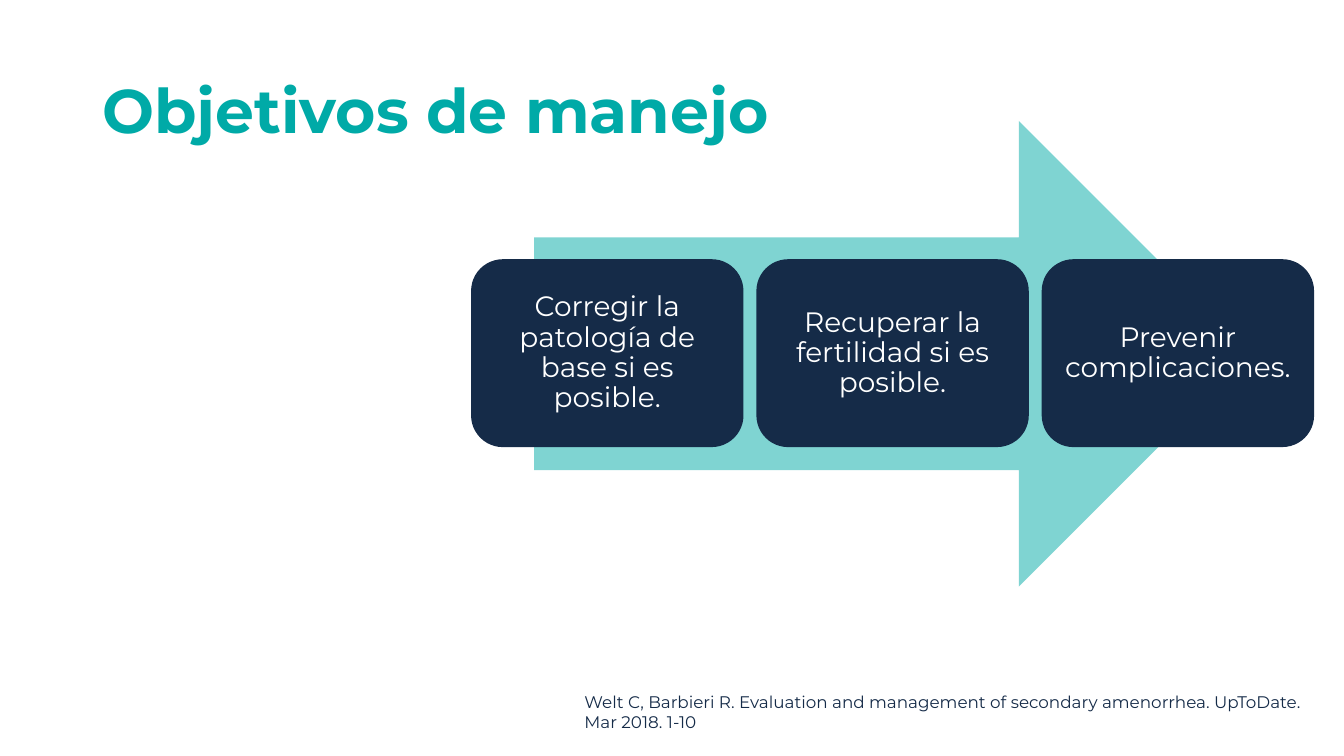
"""Build the slide on management goals: a wide arrow carrying three goal cards."""
from dataclasses import dataclass

from lxml.etree import SubElement
from pptx import Presentation
from pptx.dml.color import RGBColor
from pptx.enum.shapes import MSO_SHAPE
from pptx.enum.text import MSO_ANCHOR, PP_ALIGN
from pptx.oxml.ns import qn
from pptx.shapes.autoshape import Shape
from pptx.slide import Slide
from pptx.util import Cm, Pt


@dataclass(frozen=True)
class Theme:
    """Font, colours and type sizes of the slide."""
    font: str = "Montserrat"
    teal: RGBColor = RGBColor(0x00, 0xAA, 0xA7)
    navy: RGBColor = RGBColor(0x15, 0x2B, 0x48)
    white: RGBColor = RGBColor(0xFF, 0xFF, 0xFF)
    title_size: int = 44
    card_size: int = 20
    citation_size: int = 12


@dataclass(frozen=True)
class Area:
    """Position and size in centimetres."""
    left: float
    top: float
    width: float
    height: float

    def lengths(self) -> tuple[Cm, Cm, Cm, Cm]:
        """Return the four measures as lengths."""
        return Cm(self.left), Cm(self.top), Cm(self.width), Cm(self.height)


@dataclass(frozen=True)
class TextStyle:
    """Look of a block of text."""
    size: int
    color: RGBColor
    bold: bool = False
    align: PP_ALIGN = PP_ALIGN.LEFT
    anchor: MSO_ANCHOR = MSO_ANCHOR.TOP
    line_spacing: float = 1.0
    side_margin: float = 0.25
    end_margin: float = 0.13


THEME = Theme()
TITLE_STYLE = TextStyle(THEME.title_size, THEME.teal, bold=True,
                        anchor=MSO_ANCHOR.MIDDLE, line_spacing=0.9)
CARD_STYLE = TextStyle(THEME.card_size, THEME.white, align=PP_ALIGN.CENTER,
                       anchor=MSO_ANCHOR.MIDDLE, line_spacing=0.9,
                       side_margin=0.21, end_margin=0.21)
CITATION_STYLE = TextStyle(THEME.citation_size, THEME.navy)

TITLE_AREA = Area(2.33, 1.01, 29.21, 3.68)
ARROW_AREA = Area(13.46, 3.05, 18.08, 11.73)
FIRST_CARD = Area(11.89, 6.55, 6.83, 4.7)
CITATION_AREA = Area(14.48, 17.3, 18.97, 1.27)
CARD_PITCH = 7.19

GOALS = (
    "Corregir la patología de base si es posible.",
    "Recuperar la fertilidad si es posible.",
    "Prevenir complicaciones.",
)
CITATION = ("Welt C, Barbieri R. Evaluation and management of secondary "
            "amenorrhea. UpToDate. Mar 2018. 1-10")


def apply(target: object, values: dict[str, object]) -> None:
    """Set each named attribute of the target."""
    for name, value in values.items():
        setattr(target, name, value)


def write_text(box: Shape, text: str, style: TextStyle) -> None:
    """Write one styled paragraph into a box."""
    frame = box.text_frame
    apply(frame, {
        "word_wrap": True, "vertical_anchor": style.anchor,
        "margin_left": Cm(style.side_margin), "margin_right": Cm(style.side_margin),
        "margin_top": Cm(style.end_margin), "margin_bottom": Cm(style.end_margin),
    })
    para = frame.paragraphs[0]
    apply(para, {"alignment": style.align, "line_spacing": style.line_spacing})
    span = para.add_run()
    span.text = text
    apply(span.font, {"name": THEME.font, "size": Pt(style.size), "bold": style.bold})
    span.font.color.rgb = style.color


def add_text(page: Slide, area: Area, text: str, style: TextStyle) -> None:
    """Add a text box."""
    write_text(page.shapes.add_textbox(*area.lengths()), text, style)


def add_filled(page: Slide, kind: MSO_SHAPE, area: Area, color: RGBColor) -> Shape:
    """Add a flat shape with a solid fill."""
    shape = page.shapes.add_shape(kind, *area.lengths())
    shape.shadow.inherit = False
    shape.fill.solid()
    shape.fill.fore_color.rgb = color
    return shape


def add_arrow(page: Slide) -> None:
    """Add the half-transparent arrow behind the cards."""
    arrow = add_filled(page, MSO_SHAPE.RIGHT_ARROW, ARROW_AREA, THEME.teal)
    arrow.line.fill.background()
    color = arrow.fill._xPr.find(qn("a:solidFill"))[0]
    SubElement(color, qn("a:alpha"), val="50000")


def add_card(page: Slide, index: int, goal: str) -> None:
    """Add the goal card at its place in the row."""
    area = Area(FIRST_CARD.left + index * CARD_PITCH, FIRST_CARD.top,
                FIRST_CARD.width, FIRST_CARD.height)
    card = add_filled(page, MSO_SHAPE.ROUNDED_RECTANGLE, area, THEME.navy)
    card.line.color.rgb = THEME.navy
    card.line.width = Pt(1)
    write_text(card, goal, CARD_STYLE)


def main() -> None:
    """Build and save the deck."""
    deck = Presentation()
    apply(deck, {"slide_width": Cm(33.87), "slide_height": Cm(19.05)})
    page = deck.slides.add_slide(deck.slide_layouts[6])
    add_text(page, TITLE_AREA, "Objetivos de manejo", TITLE_STYLE)
    add_arrow(page)
    for index, goal in enumerate(GOALS):
        add_card(page, index, goal)
    add_text(page, CITATION_AREA, CITATION, CITATION_STYLE)
    deck.save("out.pptx")


if __name__ == "__main__":
    main()
